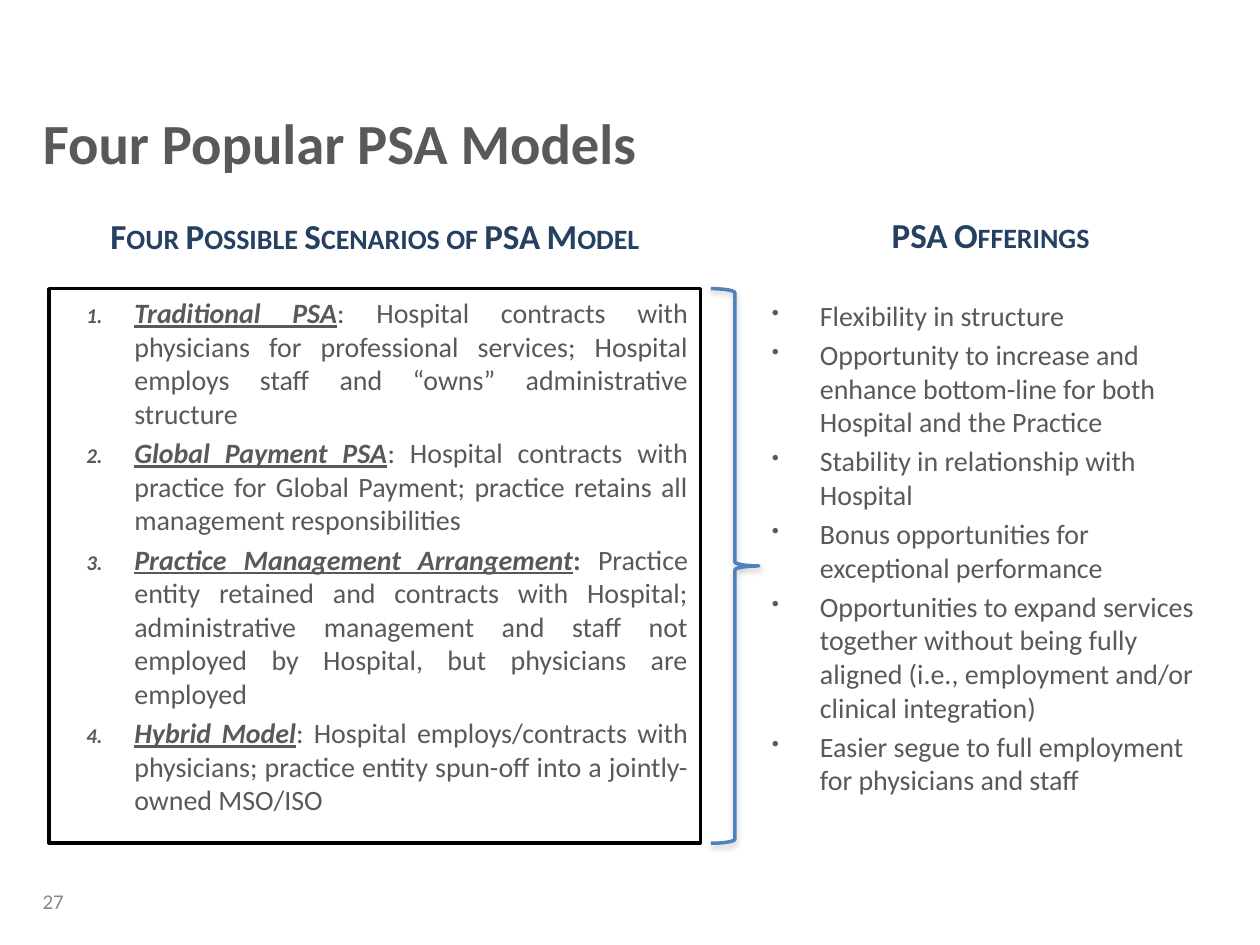
import lxml.etree
import pptx
import pptx.util
import pptx.dml.color
import pptx.enum.shapes
import pptx.enum.text
import pptx.oxml
import pptx.oxml.ns

Cm = pptx.util.Cm
Align = pptx.enum.text.PP_ALIGN
Anchor = pptx.enum.text.MSO_ANCHOR
Shape = pptx.enum.shapes.MSO_SHAPE

TITLE = "Four Popular PSA Models"
PAGE_NUMBER = "27"
SCENARIO_HEADING = "Four Possible Scenarios of PSA Model"
SCENARIOS = [
    ("Traditional PSA", ": ", False,
     "Hospital contracts with physicians for professional services; "
     "Hospital employs staff and “owns” administrative structure"),
    ("Global Payment PSA", ": ", False,
     "Hospital contracts with practice for Global Payment; "
     "practice retains all management responsibilities"),
    ("Practice Management Arrangement", ": ", True,
     "Practice entity retained and contracts with Hospital; administrative "
     "management and staff not employed by Hospital, but physicians are employed"),
    ("Hybrid Model", ": ", False,
     "Hospital employs/contracts with physicians; "
     "practice entity spun-off into a jointly-owned MSO/ISO"),
]
OFFERING_HEADING = "PSA Offerings"
OFFERINGS = [
    "Flexibility in structure",
    "Opportunity to increase and enhance bottom-line for both Hospital and the Practice",
    "Stability in relationship with Hospital",
    "Bonus opportunities for exceptional performance",
    "Opportunities to expand services together without being fully aligned "
    "(i.e., employment and/or clinical integration)",
    "Easier segue to full employment for physicians and staff",
]

THEME = {
    "font": "Calibri",
    "text": "595959", "heading": "254061", "muted": "898989",
    "paper": "FFFFFF", "frame": "000000", "brace": "4F81BD",
    "title_size": 32.4, "heading_size": 20, "body_size": 16, "number_size": 12,
    "line_width": 2, "paragraph_gap": 3.2,
}

LEFT, COLUMN_WIDTH = 0.99, 13.13
PANEL_TOP, PANEL_HEIGHT = 5.82, 11.18
HEADING_HEIGHT = 1.11


def color(name):
    return pptx.dml.color.RGBColor.from_string(THEME[name])


def style(font, size, color_name, bold=None):
    font.name = THEME["font"]
    font.size = pptx.util.Pt(THEME[size])
    font.color.rgb = color(color_name)
    font.bold = bold


def add_text_box(slide, left, top, width, height):
    box = slide.shapes.add_textbox(Cm(left), Cm(top), Cm(width), Cm(height))
    box.text_frame.word_wrap = True
    return box


def add_outline(slide, preset, left, width, line_color):
    shape = slide.shapes.add_shape(
        preset, Cm(left), Cm(PANEL_TOP), Cm(width), Cm(PANEL_HEIGHT))
    shape.shadow.inherit = False
    shape.line.color.rgb = color(line_color)
    shape.line.width = pptx.util.Pt(THEME["line_width"])
    return shape


def add_heading(slide, text, left, top, width):
    box = add_text_box(slide, left, top, width, HEADING_HEIGHT)
    box.fill.solid()
    box.fill.fore_color.rgb = color("paper")
    paragraph = box.text_frame.paragraphs[0]
    paragraph.alignment = Align.CENTER
    run = paragraph.add_run()
    run.text = text
    run._r.get_or_add_rPr().set("cap", "small")
    style(paragraph.font, "heading_size", "heading", True)


def add_list_paragraph(frame, index, bullet_tag, **bullet):
    paragraph = frame.add_paragraph() if index else frame.paragraphs[0]
    properties = paragraph._p.get_or_add_pPr()
    properties.set("marL", str(Cm(1.47)))
    properties.set("indent", str(-Cm(0.97)))
    if index:
        paragraph.space_before = pptx.util.Pt(THEME["paragraph_gap"])
    for tag, attributes in (("a:buSzPct", {"val": "75000"}), (bullet_tag, bullet)):
        lxml.etree.SubElement(properties, pptx.oxml.ns.qn(tag), attributes)
    style(paragraph.font, "body_size", "text")
    return paragraph


def add_scenarios(slide):
    frame = add_text_box(slide, LEFT, 5.84, COLUMN_WIDTH, 10.87).text_frame
    for index, (name, separator, bold_separator, detail) in enumerate(SCENARIOS):
        paragraph = add_list_paragraph(frame, index, "a:buAutoNum", type="arabicPeriod")
        paragraph.alignment = Align.JUSTIFY
        name_run, separator_run, detail_run = [paragraph.add_run() for _ in range(3)]
        name_run.text, separator_run.text, detail_run.text = name, separator, detail
        name_run.font.bold = name_run.font.italic = name_run.font.underline = True
        separator_run.font.bold = bold_separator


def add_offerings(slide):
    frame = add_text_box(slide, 14.81, 5.89, 10.03, 11.2).text_frame
    for index, offering in enumerate(OFFERINGS):
        paragraph = add_list_paragraph(frame, index, "a:buChar", char="•")
        paragraph.add_run().text = offering


def add_brace(slide):
    brace = add_outline(slide, Shape.RIGHT_BRACE, 14.33, 0.97, "brace")
    brace.fill.background()
    effects = brace._element.spPr.find(pptx.oxml.ns.qn("a:effectLst"))
    effects.append(pptx.oxml.parse_xml(
        f'<a:outerShdw {pptx.oxml.ns.nsdecls("a")} blurRad="39370" dist="20320" '
        'dir="5400000" rotWithShape="0"><a:srgbClr val="808080">'
        '<a:alpha val="38000"/></a:srgbClr></a:outerShdw>'))


def add_title(slide):
    title = slide.shapes.title
    title.left, title.top, title.width, title.height = Cm(0.61), Cm(2.18), Cm(23.52), Cm(2.64)
    frame = title.text_frame
    frame.text = TITLE
    frame.vertical_anchor = Anchor.TOP
    frame.margin_top = 0
    paragraph = frame.paragraphs[0]
    paragraph.alignment = Align.LEFT
    style(paragraph.font, "title_size", "text", True)


def add_page_number(slide):
    frame = add_text_box(slide, 0.61, 17.65, 5.03, 1.02).text_frame
    frame.vertical_anchor = Anchor.MIDDLE
    frame.text = PAGE_NUMBER
    style(frame.paragraphs[0].font, "number_size", "muted")


def main():
    presentation = pptx.Presentation()
    presentation.slide_width, presentation.slide_height = Cm(25.4), Cm(19.05)
    slide = presentation.slides.add_slide(presentation.slide_layouts[5])
    add_page_number(slide)
    add_title(slide)
    panel = add_outline(slide, Shape.RECTANGLE, LEFT, COLUMN_WIDTH, "frame")
    panel.fill.solid()
    panel.fill.fore_color.rgb = color("paper")
    add_scenarios(slide)
    add_heading(slide, SCENARIO_HEADING, LEFT, 4.19, COLUMN_WIDTH)
    add_offerings(slide)
    add_heading(slide, OFFERING_HEADING, 15.32, 4.17, 9.3)
    add_brace(slide)
    presentation.save("out.pptx")


if __name__ == "__main__":
    main()
